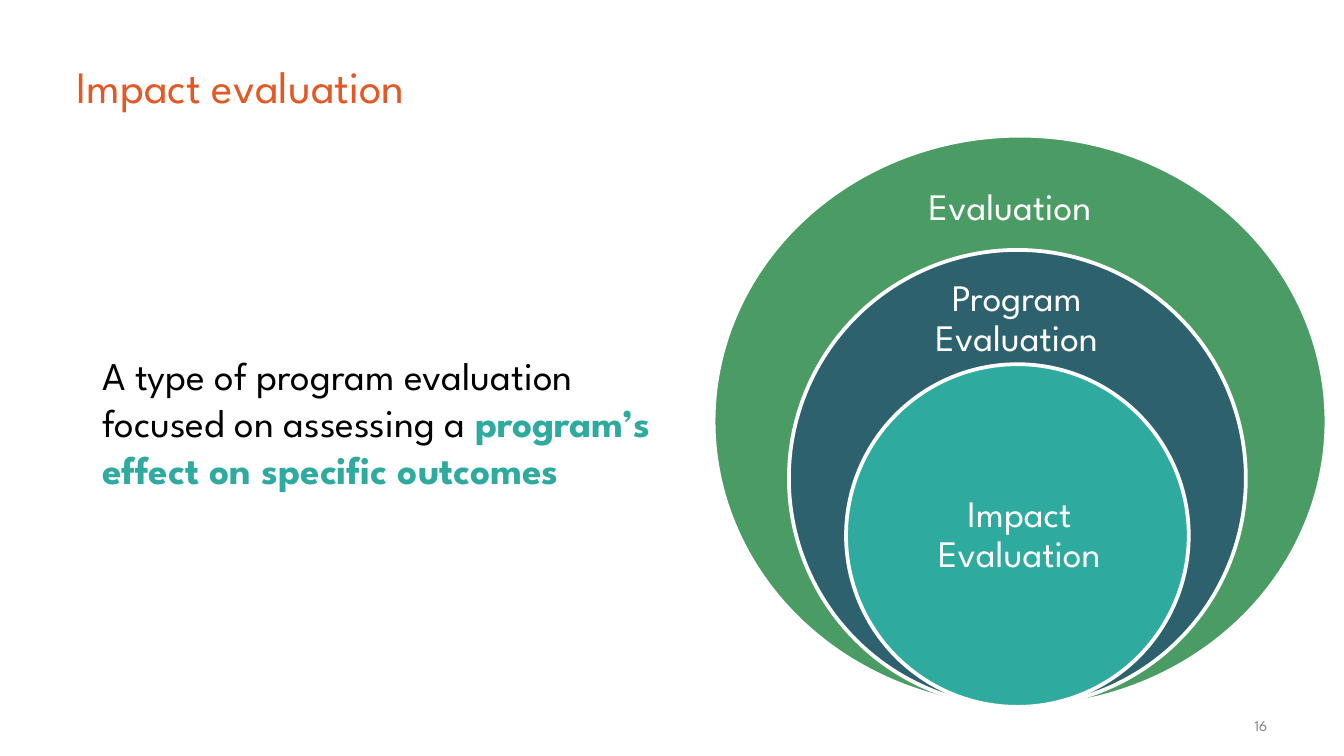
from dataclasses import dataclass

from pptx import Presentation
from pptx.dml.color import RGBColor
from pptx.enum.shapes import MSO_SHAPE
from pptx.enum.text import MSO_ANCHOR, PP_ALIGN
from pptx.util import Inches, Pt

OVAL = MSO_SHAPE.OVAL
TOP, MIDDLE = MSO_ANCHOR.TOP, MSO_ANCHOR.MIDDLE
LEFT, CENTER, RIGHT = PP_ALIGN.LEFT, PP_ALIGN.CENTER, PP_ALIGN.RIGHT

WIDTH = 10
HEIGHT = WIDTH * 9 / 16
MARGIN = 0.05 * WIDTH
BASE = 5.26  # all rings rest on this line
FONT = "League Spartan"
WHITE, BLACK, GRAY = "FFFFFF", "000000", "7F7F7F"
ORANGE, GREEN, NAVY, TEAL = "E35925", "4A9C64", "2D616E", "2FAA9F"


@dataclass
class Box:
    left: float
    top: float
    width: float
    height: float

    def place(self) -> list:
        return [Inches(v) for v in (self.left, self.top, self.width, self.height)]


@dataclass
class Run:
    text: str
    color: str
    bold: bool = False


@dataclass
class Ring:
    mid: float
    width: float
    height: float
    fill: str
    label: str
    area: Box


def paint(color: str) -> RGBColor:
    return RGBColor.from_string(color)


def write(slide, box: Box, runs: list[Run], size: float, align=LEFT,
          anchor=MIDDLE, pad: tuple = (0.07, 0.04)):
    """Add a text box of one paragraph and return that paragraph."""
    frame = slide.shapes.add_textbox(*box.place()).text_frame
    frame.word_wrap = True
    frame.vertical_anchor = anchor
    frame.margin_left = frame.margin_right = Inches(pad[0])
    frame.margin_top = frame.margin_bottom = Inches(pad[1])
    para = frame.paragraphs[0]
    para.alignment = align
    for item in runs:
        run = para.add_run()
        run.text = item.text
        run.font.name = FONT
        run.font.size = Pt(size)
        run.font.bold = item.bold
        run.font.color.rgb = paint(item.color)
    return para


def draw(slide, ring: Ring) -> None:
    """Draw one ring standing on the base line, with its label."""
    box = Box(ring.mid - ring.width / 2, BASE - ring.height, ring.width, ring.height)
    oval = slide.shapes.add_shape(OVAL, *box.place())
    oval.shadow.inherit = False
    oval.fill.solid()
    oval.fill.fore_color.rgb = paint(ring.fill)
    oval.line.color.rgb = paint(WHITE)
    oval.line.width = Pt(2)
    para = write(slide, ring.area, [Run(ring.label, WHITE)], 20, CENTER, pad=(0.16, 0.16))
    para.line_spacing = 0.9


RINGS = [
    Ring(7.59, 4.56, 4.25, GREEN, "Evaluation", Box(6.41, 1.23, 2.21, 0.64)),
    Ring(7.57, 3.4, 3.4, NAVY, "Program Evaluation", Box(6.56, 2.07, 2.01, 0.61)),
    Ring(7.57, 2.55, 2.55, TEAL, "Impact Evaluation", Box(6.61, 3.7, 1.95, 0.57)),
]


def main() -> None:
    deck = Presentation()
    deck.slide_width, deck.slide_height = Inches(WIDTH), Inches(HEIGHT)
    slide = deck.slides.add_slide(deck.slide_layouts[6])

    # Title
    write(slide, Box(MARGIN, 0.17, WIDTH - 2 * MARGIN, 0.94),
          [Run("Impact evaluation", ORANGE)], 24)

    # Definition
    para = write(slide, Box(MARGIN, 1.21, WIDTH / 2 - MARGIN, 3.86), [
        Run("A type of program evaluation focused on assessing a ", BLACK),
        Run("program’s effect on specific outcomes", TEAL, True),
    ], 21)
    para.space_before = Pt(3)
    props = para._p.get_or_add_pPr()
    props.set("marL", str(Inches(0.19)))
    props.set("indent", "0")

    # Page number
    write(slide, Box(8.57, 5.29, 0.93, 0.18), [Run("16", GRAY)], 8, RIGHT, TOP)

    # Nested rings, outermost first
    for ring in RINGS:
        draw(slide, ring)

    deck.save("out.pptx")


if __name__ == "__main__":
    main()
